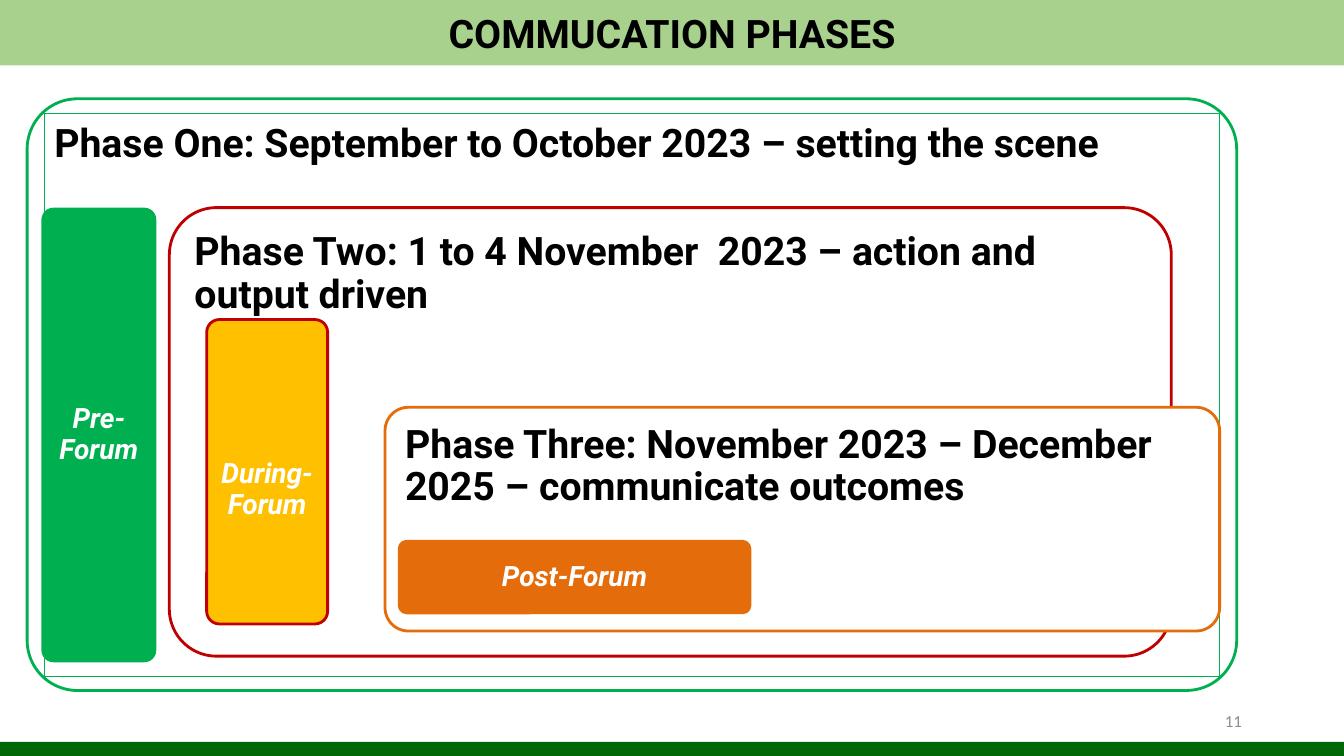
from dataclasses import dataclass

from pptx import Presentation
from pptx.dml.color import RGBColor
from pptx.enum.shapes import MSO_SHAPE
from pptx.enum.text import MSO_ANCHOR, PP_ALIGN
from pptx.util import Inches, Pt

RECTANGLE, ROUNDED = MSO_SHAPE.RECTANGLE, MSO_SHAPE.ROUNDED_RECTANGLE
TOP, MIDDLE = MSO_ANCHOR.TOP, MSO_ANCHOR.MIDDLE
LEFT, CENTER, RIGHT = PP_ALIGN.LEFT, PP_ALIGN.CENTER, PP_ALIGN.RIGHT


@dataclass(frozen=True)
class Theme:
    black: str = "000000"
    white: str = "FFFFFF"
    gray: str = "8C8C8C"
    forest: str = "006806"
    pale_green: str = "A9D18E"
    green: str = "00B050"
    red: str = "C00000"
    amber: str = "FFC000"
    orange: str = "E46C0A"
    font: str = "Roboto"
    number_font: str = "Calibri"
    heading: int = 28
    label: int = 20
    number: int = 12
    thick: float = 2
    thin: float = 0.75


def write(box, text, *, size, color, font, bold=False, italic=False,
          align=LEFT, anchor=TOP, spacing=1.0, insets=(0.1, 0.05, 0.1, 0.05)):
    frame = box.text_frame
    frame.word_wrap = True
    frame.vertical_anchor = anchor
    (frame.margin_left, frame.margin_top,
     frame.margin_right, frame.margin_bottom) = map(Inches, insets)
    para = frame.paragraphs[0]
    para.alignment = align
    para.line_spacing = spacing
    span = para.add_run()
    span.text = text
    span.font.name = font
    span.font.size = Pt(size)
    span.font.bold = bold
    span.font.italic = italic
    span.font.color.rgb = RGBColor.from_string(color)


class PhasePage:
    """Draws on one slide, with places given in percent of its width and height."""

    def __init__(self, deck, theme):
        self.deck = deck
        self.theme = theme
        self.page = deck.slides.add_slide(deck.slide_layouts[6])

    def place(self, left, top, width, height):
        across, down = self.deck.slide_width / 100, self.deck.slide_height / 100
        return (round(left * across), round(top * down),
                round(width * across), round(height * down))

    def panel(self, area, fill=None, line=None, weight=None, corner=None):
        kind = RECTANGLE if corner is None else ROUNDED
        box = self.page.shapes.add_shape(kind, *self.place(*area))
        box.shadow.inherit = False
        if corner is not None:
            box.adjustments[0] = corner
        if fill:
            box.fill.solid()
            box.fill.fore_color.rgb = RGBColor.from_string(fill)
        else:
            box.fill.background()
        if line:
            box.line.color.rgb = RGBColor.from_string(line)
            box.line.width = Pt(weight or self.theme.thick)
        else:
            box.line.fill.background()
        return box

    def text(self, area, words, **style):
        box = self.page.shapes.add_textbox(*self.place(*area))
        write(box, words, **style)

    def phase(self, area, heading_area, heading, color, corner=0.105):
        self.panel(area, self.theme.white, color, corner=corner)
        self.text(heading_area, heading, size=self.theme.heading, bold=True,
                  color=self.theme.black, font=self.theme.font, spacing=0.9,
                  insets=(0.1, 0.1, 0.1, 0.1))

    def stage(self, area, label, fill, line=None, drop=0):
        card = self.panel(area, fill, line, corner=0.105)
        write(card, label, size=self.theme.label, bold=True, italic=True,
              color=self.theme.white, font=self.theme.font, align=CENTER,
              anchor=MIDDLE, spacing=0.9, insets=(0.07, 0.07 + drop, 0.07, 0.07))

    def title(self, area, words):
        band = self.panel(area, self.theme.pale_green)
        write(band, words, size=self.theme.heading, bold=True, align=CENTER,
              color=self.theme.black, font=self.theme.font, anchor=MIDDLE)

    def number(self, area, words):
        self.text(area, words, size=self.theme.number, color=self.theme.gray,
                  font=self.theme.number_font, align=RIGHT, anchor=MIDDLE)


def main():
    deck = Presentation()
    deck.slide_width, deck.slide_height = Inches(13.33), Inches(7.5)
    theme = Theme()
    page = PhasePage(deck, theme)

    page.panel((0, 98.13, 100, 1.87), theme.forest)
    page.number((70.65, 92.67, 22.5, 5.33), "11")

    scene = (3.3, 15.07, 87.45, 74.4)
    page.phase((2.02, 13.07, 90, 78.27), scene,
               "Phase One: September to October 2023 – setting the scene",
               theme.green, corner=0.085)
    page.panel(scene, line=theme.green, weight=theme.thin)
    page.stage((3.08, 27.47, 8.55, 60.13), "Pre-Forum", theme.green)

    page.phase((12.6, 27.47, 74.55, 59.33), (13.73, 29.33, 72.15, 55.73),
               "Phase Two: 1 to 4 November  2023 – action and output driven",
               theme.red)
    page.stage((15.38, 42.27, 9, 40.27), "During- Forum", theme.amber,
               theme.red, drop=0.36)

    page.phase((28.65, 53.87, 62.1, 29.6), (29.4, 54.8, 60.52, 27.73),
               "Phase Three: November 2023 – December 2025 – communicate outcomes",
               theme.orange)
    page.stage((29.7, 71.6, 26.1, 9.47), "Post-Forum", theme.orange, theme.orange)

    page.title((0, 0, 100, 8.67), "COMMUCATION PHASES")
    deck.save("out.pptx")


if __name__ == "__main__":
    main()
